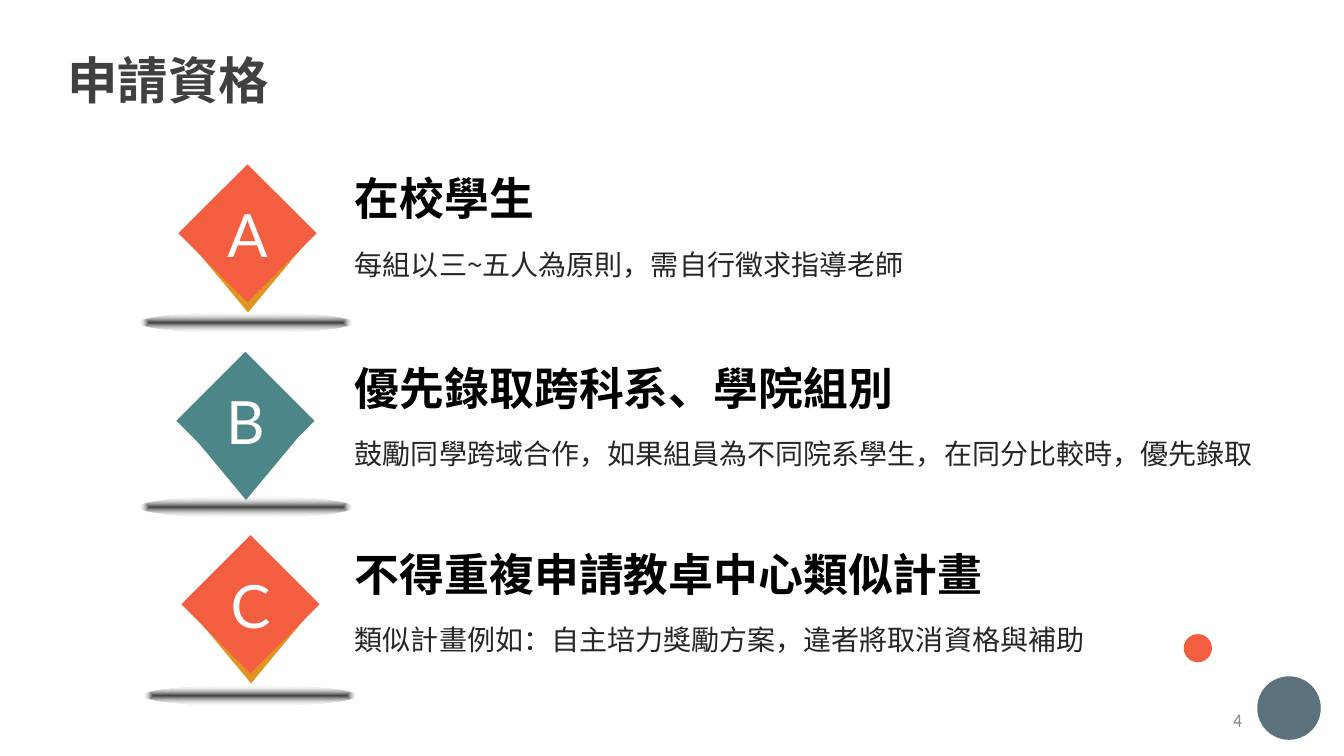
"""Build the slide that lists who may apply."""
from lxml import etree
from pptx import Presentation, util as u
from pptx.dml.color import RGBColor
from pptx.enum import shapes, text
from pptx.oxml import parse_xml
from pptx.oxml.ns import nsdecls, qn

CORAL = RGBColor(0xF3, 0x5E, 0x40)
AMBER = RGBColor(0xE1, 0x95, 0x20)
TEAL = RGBColor(0x4D, 0x86, 0x89)
SLATE = RGBColor(0x5B, 0x72, 0x7D)
WHITE = RGBColor(0xFF, 0xFF, 0xFF)
BLACK = RGBColor(0, 0, 0)
DARK = RGBColor(0x40, 0x40, 0x40)
INK = RGBColor(0x26, 0x26, 0x26)
GREY = RGBColor(0x8C, 0x8C, 0x8C)
CJK = "Noto Sans CJK SC"
OVAL = shapes.MSO_SHAPE.OVAL
GEM = shapes.MSO_SHAPE.DIAMOND
GLOW = f"""<a:gradFill {nsdecls('a')} rotWithShape="1"><a:gsLst>
<a:gs pos="0"><a:srgbClr val="404040"/></a:gs>
<a:gs pos="100000"><a:srgbClr val="EEECE1"><a:alpha val="0"/></a:srgbClr></a:gs>
</a:gsLst><a:path path="shape">
<a:fillToRect l="50000" t="50000" r="50000" b="50000"/></a:path></a:gradFill>"""


def draw(home, kind, box, color):
    form = home.add_shape(kind, *map(u.Inches, box))
    form.shadow.inherit = False
    form.line.fill.background()
    form.fill.solid()
    form.fill.fore_color.rgb = color
    return form


def write(para, words, size, color, bold=False, face=CJK):
    run = para.add_run()
    run.text = words
    font = run.font
    font.size, font.bold, font.name = u.Pt(size), bold, face
    font.color.rgb = color
    etree.SubElement(font._element, qn("a:ea")).set("typeface", face)


deck = Presentation()
deck.slide_width, deck.slide_height = u.Inches(13.33), u.Inches(7.5)
slide = deck.slides.add_slide(deck.slide_layouts[6])
tree = slide.shapes

draw(tree, OVAL, (12.47, 6.71, 0.63, 0.63), SLATE)
draw(tree, OVAL, (11.74, 6.29, 0.28, 0.28), CORAL)

title = tree.add_textbox(*map(u.Inches, (0.57, 0.44, 3.1, 0.71))).text_frame
title.word_wrap = True
write(title.paragraphs[0], "申請資格", 36, DARK, True)

rows = [
    ("A", 1.77, 1.63, 1.38, 3.1, CORAL, AMBER, 1.88, 6.5,
     "在校學生", "每組以三~五人為原則，需自行徵求指導老師"),
    ("B", 1.75, 3.49, 1.38, 4.93, TEAL, TEAL, 3.76, 9.25,
     "優先錄取跨科系、學院組別",
     "鼓勵同學跨域合作，如果組員為不同院系學生，在同分比較時，優先錄取"),
    ("C", 1.8, 5.31, 1.42, 6.8, CORAL, AMBER, 5.61, 9.25,
     "不得重複申請教卓中心類似計畫",
     "類似計畫例如：自主培力獎勵方案，違者將取消資格與補助"),
]
for mark, left, top, dim, low, front, back, high, wide, head, note in rows:
    shade = draw(tree, OVAL, (dim, low, 2.12, 0.2), DARK)
    solid = shade._element.spPr.find(qn("a:solidFill"))
    solid.getparent().replace(solid, parse_xml(GLOW))

    pair = tree.add_group_shape().shapes
    draw(pair, GEM, (left + 0.12, top + 0.1, 1.14, 1.37), back)
    frame = draw(pair, GEM, (left, top, 1.37, 1.37), front).text_frame
    frame.margin_left = frame.margin_right = 0
    frame.margin_top = frame.margin_bottom = 0
    frame.vertical_anchor = text.MSO_ANCHOR.MIDDLE
    frame.paragraphs[0].alignment = text.PP_ALIGN.CENTER
    write(frame.paragraphs[0], mark, 42.6, WHITE, face="Lato")

    body = tree.add_textbox(*map(u.Inches, (3.37, high, wide, 0.99))).text_frame
    body.word_wrap = True
    body.margin_left = body.margin_right = u.Inches(0.15)
    body.margin_top = body.margin_bottom = u.Inches(0.07)
    first, last = body.paragraphs[0], body.add_paragraph()
    first.line_spacing = last.line_spacing = u.Pt(20)
    last.space_before = u.Pt(20)
    write(first, head, 32, BLACK, True)
    write(last, note, 20, INK)

page = tree.add_textbox(*map(u.Inches, (9.42, 6.95, 3, 0.4))).text_frame
page.word_wrap = True
page.vertical_anchor = text.MSO_ANCHOR.MIDDLE
page.paragraphs[0].alignment = text.PP_ALIGN.RIGHT
write(page.paragraphs[0], "4", 12, GREY)

deck.save("out.pptx")
